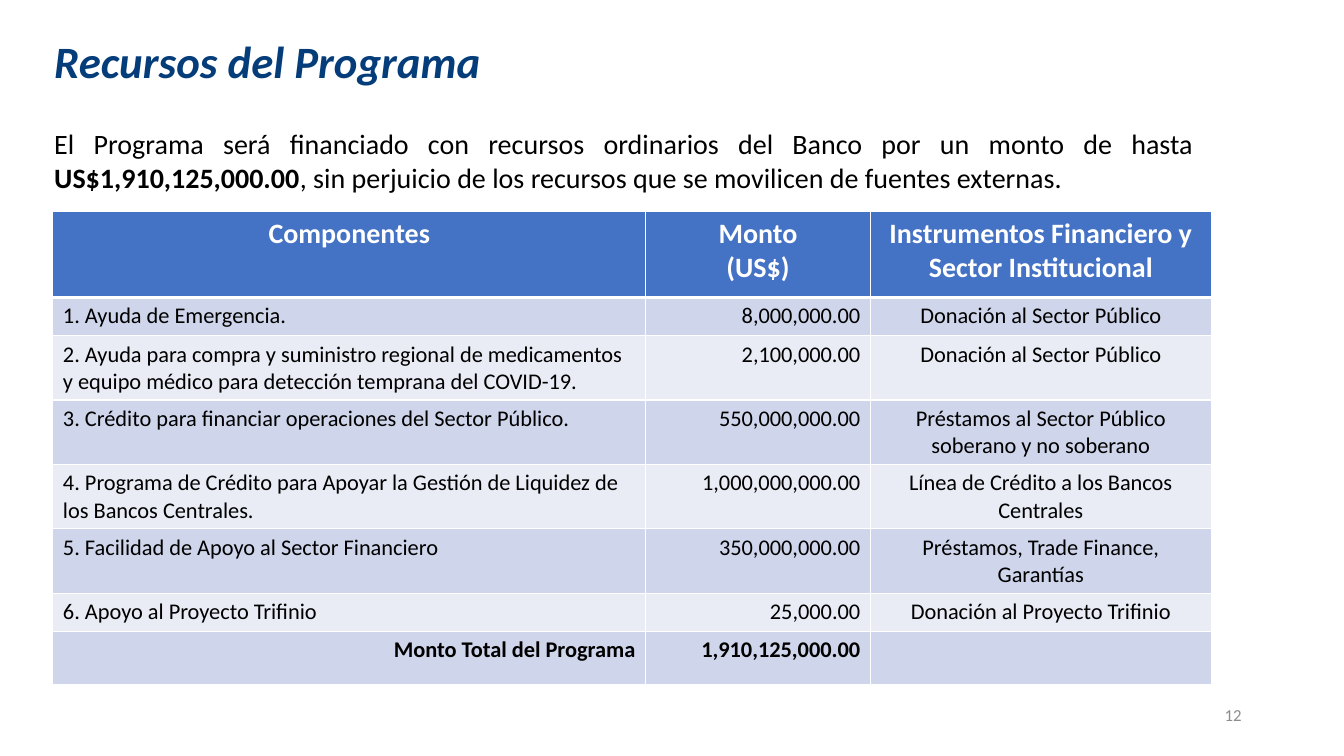
from pptx import Presentation
from pptx.dml.color import RGBColor
from pptx.enum import text
from pptx.oxml import parse_xml
from pptx.oxml.ns import nsdecls
from pptx.util import Pt

NAVY = RGBColor(0x05, 0x3D, 0x7A)
BLUE = RGBColor(0x44, 0x72, 0xC4)
BANDS = RGBColor(0xCF, 0xD5, 0xEA), RGBColor(0xE9, 0xEB, 0xF5)
BLACK = RGBColor(0, 0, 0)
WHITE = RGBColor(0xFF, 0xFF, 0xFF)
GRAY = RGBColor(0x8C, 0x8C, 0x8C)
ALIGN = text.PP_ALIGN

WIDTHS = 423.4, 160.6, 243.4
HEIGHTS = 61.2, 27.4, 46, 46, 46, 46, 27.4, 38
ROWS = [
    ("Componentes", "Monto\n(US$)", "Instrumentos Financiero y Sector Institucional"),
    ("1. Ayuda de Emergencia.", "8,000,000.00", "Donación al Sector Público"),
    ("2. Ayuda para compra y suministro regional de medicamentos y equipo médico "
     "para detección temprana del COVID-19.", "2,100,000.00", "Donación al Sector Público"),
    ("3. Crédito para financiar operaciones del Sector Público.", "550,000,000.00",
     "Préstamos al Sector Público soberano y no soberano"),
    ("4. Programa de Crédito para Apoyar la Gestión de Liquidez de los Bancos Centrales.",
     "1,000,000,000.00", "Línea de Crédito a los Bancos Centrales"),
    ("5. Facilidad de Apoyo al Sector Financiero", "350,000,000.00",
     "Préstamos, Trade Finance, Garantías"),
    ("6. Apoyo al Proyecto Trifinio", "25,000.00", "Donación al Proyecto Trifinio"),
    ("Monto Total del Programa", "1,910,125,000.00", ""),
]


def style(run, size, color, bold=False, italic=False):
    font = run.font
    font.name, font.size = "Calibri", Pt(size)
    font.bold, font.italic = bold, italic
    font.color.rgb = color


def add_text(slide, box, parts, size, color, align=ALIGN.LEFT, italic=False,
             anchor=text.MSO_ANCHOR.TOP):
    """Place one paragraph made of (words, bold) parts in the box."""
    frame = slide.shapes.add_textbox(*map(Pt, box)).text_frame
    frame.word_wrap = True
    frame.vertical_anchor = anchor
    para = frame.paragraphs[0]
    para.alignment = align
    for words, bold in parts:
        run = para.add_run()
        run.text = words
        style(run, size, color, bold, italic)
    return para


def set_edges(cell, top, bottom):
    """Give the cell white borders, 1 pt wide at the sides."""
    props = cell._tc.get_or_add_tcPr()
    for i, (side, width) in enumerate(zip("LRTB", (1, 1, top, bottom))):
        props.insert(i, parse_xml(
            f'<a:ln{side} {nsdecls("a")} w="{Pt(width)}"><a:solidFill>'
            f'<a:srgbClr val="{WHITE}"/></a:solidFill></a:ln{side}>'))


def fill_cell(cell, words, row, col):
    head, total = row == 0, row == len(ROWS) - 1
    cell.fill.solid()
    cell.fill.fore_color.rgb = BLUE if head else BANDS[(row - 1) % 2]
    set_edges(cell, 3 if row == 1 else 1, 3 if head else 1)
    cell.text_frame.text = words
    align = (ALIGN.LEFT, ALIGN.RIGHT, ALIGN.CENTER)[col]
    if head:
        align = ALIGN.CENTER
    elif total:
        align = ALIGN.RIGHT
    for para in cell.text_frame.paragraphs:
        para.alignment = align
        para.font.size = Pt(16)
        for run in para.runs:
            style(run, 20 if head else 16, WHITE if head else BLACK, head or total)


def add_grid(slide, left, top):
    table = slide.shapes.add_table(len(ROWS), len(WIDTHS), Pt(left), Pt(top),
                                   Pt(sum(WIDTHS)), Pt(sum(HEIGHTS))).table
    for column, width in zip(table.columns, WIDTHS):
        column.width = Pt(width)
    for r, (line, height) in enumerate(zip(ROWS, HEIGHTS)):
        table.rows[r].height = Pt(height)
        for c, words in enumerate(line):
            fill_cell(table.cell(r, c), words, r, c)


def add_page(deck):
    slide = deck.slides.add_slide(deck.slide_layouts[6])
    # Title
    title = add_text(slide, (31.7, 25.2, 728, 70), [("Recursos del Programa", True)],
                     32, NAVY, italic=True)
    title.line_spacing = 0.9
    # Components and amounts
    add_grid(slide, 37.8, 151.2)
    # Page number
    add_text(slide, (678, 496, 216, 29), [("12", False)], 12, GRAY, ALIGN.RIGHT,
             anchor=text.MSO_ANCHOR.MIDDLE)
    # Introduction
    add_text(slide, (31.7, 87.1, 828, 55.4), [
        ("El Programa será financiado con recursos ordinarios del Banco por un monto "
         "de hasta ", False),
        ("US$1,910,125,000.00", True),
        (", sin perjuicio de los recursos que se movilicen de fuentes externas.", False),
    ], 20, BLACK, ALIGN.JUSTIFY)


def main():
    deck = Presentation()
    deck.slide_width, deck.slide_height = Pt(960), Pt(540)
    add_page(deck)
    deck.save("out.pptx")


if __name__ == "__main__":
    main()
